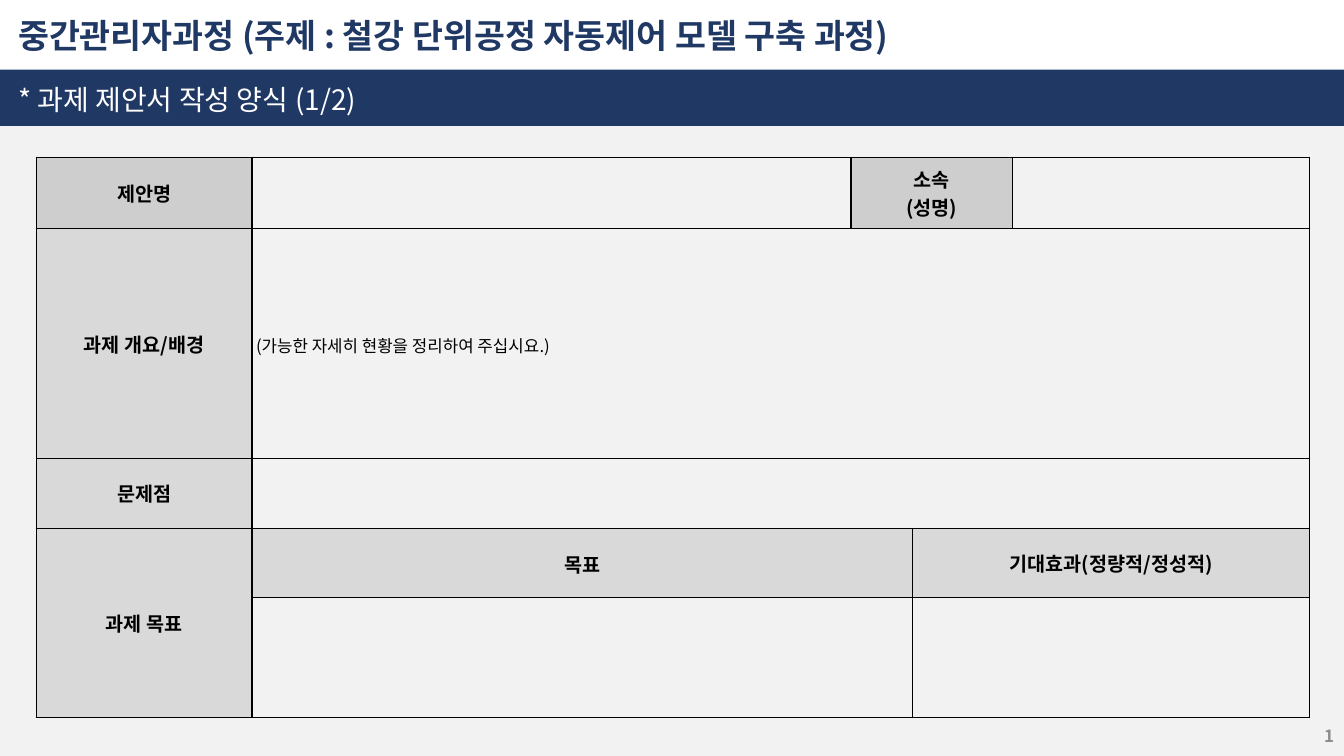
from lxml import etree
from pptx import Presentation
from pptx.dml.color import RGBColor
from pptx.enum.shapes import MSO_SHAPE
from pptx.enum.text import MSO_ANCHOR, PP_ALIGN
from pptx.oxml import parse_xml
from pptx.oxml.ns import nsdecls, qn
from pptx.util import Inches, Pt

TITLE = "중간관리자과정 (주제 : 철강 단위공정 자동제어 모델 구축 과정)"
SUBTITLE = "* 과제 제안서 작성 양식 (1/2)"
FONT = "Noto Sans CJK KR"

NAVY = RGBColor(0x20, 0x38, 0x64)
WHITE = RGBColor(0xFF, 0xFF, 0xFF)
BLACK = RGBColor(0x00, 0x00, 0x00)
PAGE_GRAY = RGBColor(0xF2, 0xF2, 0xF2)
NUMBER_GRAY = RGBColor(0x8C, 0x8C, 0x8C)
LABEL_GRAY = RGBColor(0xD9, 0xD9, 0xD9)
HEAD_GRAY = RGBColor(0xBF, 0xBF, 0xBF)

WIDTH, HEIGHT = 13.33, 7.5
COLUMNS = [2.14, 5.94, 0.61, 0.99, 2.95]
ROWS = [0.71, 2.28, 0.69, 0.69, 1.19]
# first row, first column, last row, last column
MERGES = [(0, 2, 0, 3), (1, 1, 1, 4), (2, 1, 2, 4), (3, 0, 4, 0),
          (3, 1, 3, 2), (3, 3, 3, 4), (4, 1, 4, 2), (4, 3, 4, 4)]
# (row, column): text, fill
LABELS = {
    (0, 0): ("제안명", HEAD_GRAY),
    (0, 2): ("소속\n(성명)", HEAD_GRAY),
    (1, 0): ("과제 개요/배경", LABEL_GRAY),
    (2, 0): ("문제점", LABEL_GRAY),
    (3, 0): ("과제 목표", LABEL_GRAY),
    (3, 1): ("목표", LABEL_GRAY),
    (3, 3): ("기대효과(정량적/정성적)", LABEL_GRAY),
}
HINT_CELL, HINT = (1, 1), "(가능한 자세히 현황을 정리하여 주십시요.)"


def format_text(frame, size, color, bold=False, align=PP_ALIGN.LEFT):
    for paragraph in frame.paragraphs:
        paragraph.alignment = align
        font = paragraph.font
        font.name, font.size, font.bold = FONT, Pt(size), bold
        font.color.rgb = color
        defaults = paragraph._p.pPr.find(qn("a:defRPr"))
        etree.SubElement(defaults, qn("a:ea"), typeface=FONT)


def add_bar(slide, top, height, color):
    bar = slide.shapes.add_shape(MSO_SHAPE.RECTANGLE, 0, Inches(top),
                                 Inches(WIDTH), Inches(height))
    bar.shadow.inherit = False
    bar.fill.solid()
    bar.fill.fore_color.rgb = color
    bar.line.fill.background()


def fill_heading(shape, text, top, height, size, color, bold):
    shape.left, shape.top = Inches(0.18), Inches(top)
    shape.width, shape.height = Inches(11.12), Inches(height)
    frame = shape.text_frame
    frame.text = text
    frame.word_wrap = True
    frame.vertical_anchor = MSO_ANCHOR.MIDDLE
    frame.margin_left = frame.margin_right = 0
    frame.margin_top = frame.margin_bottom = 0
    format_text(frame, size, color, bold)


def add_borders(cell):
    properties = cell._tc.get_or_add_tcPr()
    for index, side in enumerate("LRTB"):
        properties.insert(index, parse_xml(
            f'<a:ln{side} {nsdecls("a")} w="{Pt(1)}"><a:solidFill>'
            f'<a:srgbClr val="{BLACK}"/></a:solidFill></a:ln{side}>'))


def add_form(slide):
    table = slide.shapes.add_table(
        len(ROWS), len(COLUMNS), Inches(0.36), Inches(1.56),
        Inches(sum(COLUMNS)), Inches(sum(ROWS))).table
    table.first_row = table.horz_banding = False
    for column, width in zip(table.columns, COLUMNS):
        column.width = Inches(width)
    for row, height in zip(table.rows, ROWS):
        row.height = Inches(height)
    for top, left, bottom, right in MERGES:
        table.cell(top, left).merge(table.cell(bottom, right))

    for cell in table.iter_cells():
        cell.vertical_anchor = MSO_ANCHOR.MIDDLE
        cell.margin_left = cell.margin_right = Inches(0.04)
        cell.margin_top = cell.margin_bottom = Inches(0.04)
        cell.fill.background()
        add_borders(cell)

    for position, (text, color) in LABELS.items():
        cell = table.cell(*position)
        cell.text = text
        format_text(cell.text_frame, 14, BLACK, True, PP_ALIGN.CENTER)
        cell.fill.solid()
        cell.fill.fore_color.rgb = color
        if color == HEAD_GRAY:
            tint = cell._tc.tcPr.find(qn("a:solidFill"))[0]
            etree.SubElement(tint, qn("a:alpha"), val="70000")

    hint = table.cell(*HINT_CELL)
    hint.text = HINT
    format_text(hint.text_frame, 12, BLACK)
    for position in (HINT_CELL, (3, 1)):
        table.cell(*position).text_frame.paragraphs[0].line_spacing = 1.1


def add_slide_number(slide):
    box = slide.shapes.add_textbox(Inches(WIDTH - 3), Inches(HEIGHT - 0.4),
                                   Inches(3), Inches(0.4))
    frame = box.text_frame
    frame.word_wrap = True
    frame.vertical_anchor = MSO_ANCHOR.MIDDLE
    format_text(frame, 12, NUMBER_GRAY, True, PP_ALIGN.RIGHT)
    frame.paragraphs[0]._p.append(parse_xml(
        f'<a:fld {nsdecls("a")} id="{{B6F15528-21DE-4FAA-801E-634DDDAF4B2B}}" '
        'type="slidenum"><a:rPr lang="ko-KR"/><a:t>1</a:t></a:fld>'))


def main():
    presentation = Presentation()
    presentation.slide_width = Inches(WIDTH)
    presentation.slide_height = Inches(HEIGHT)
    slide = presentation.slides.add_slide(presentation.slide_layouts[5])
    add_bar(slide, 0.94, HEIGHT - 0.94, PAGE_GRAY)
    add_bar(slide, 0.69, 0.56, NAVY)
    add_slide_number(slide)
    add_form(slide)
    subtitle = slide.shapes.add_textbox(0, 0, 0, 0)
    fill_heading(subtitle, SUBTITLE, 0.82, 0.34, 20, WHITE, False)
    fill_heading(slide.shapes.title, TITLE, 0.15, 0.4, 24, NAVY, True)
    presentation.save("out.pptx")


if __name__ == "__main__":
    main()
